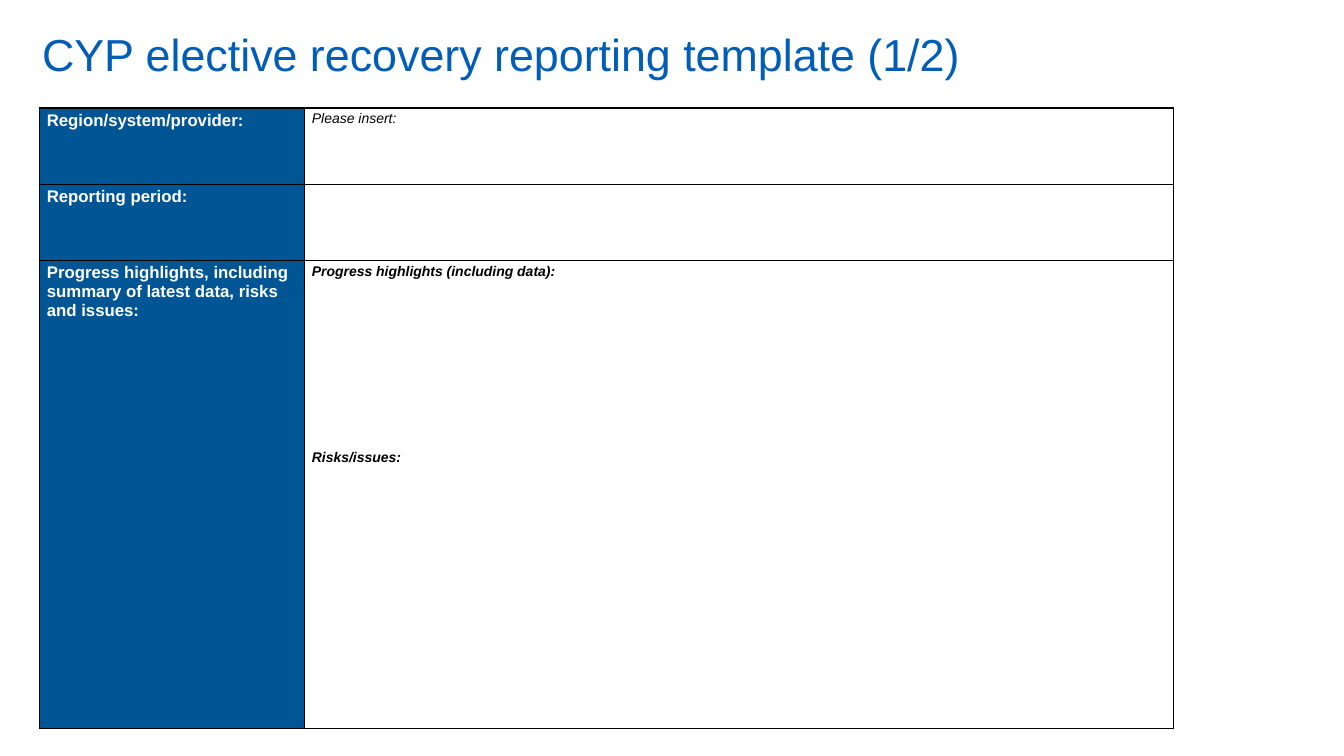
from lxml import etree
from pptx import Presentation
from pptx.dml.color import RGBColor
from pptx.enum.text import MSO_ANCHOR as Anchor
from pptx.oxml.ns import qn
from pptx.util import Cm, Pt

BLACK = RGBColor(0x00, 0x00, 0x00)
WHITE = RGBColor(0xFF, 0xFF, 0xFF)
TITLE_BLUE = RGBColor(0x00, 0x5E, 0xB8)
LABEL_BLUE = RGBColor(0x00, 0x56, 0x95)

COLUMN_WIDTHS = [Cm(6.68), Cm(21.89)]
ROW_HEIGHTS = [Cm(1.93), Cm(1.91), Cm(11.79)]

# Each row: label, then the prompts of the answer cell with their format.
REPORT_ROWS = [
    ("Region/system/provider:", [("Please insert:", {})]),
    ("Reporting period:", []),
    (
        "Progress highlights, including summary of latest data, risks and issues:",
        [
            ("Progress highlights (including data):", {"bold": True}),
            ("Risks/issues:", {"bold": True, "space_before": 122}),
        ],
    ),
]


def write_text(paragraph, text, *, size, color, bold=False, italic=False,
               space_before=0, line_spacing=None):
    if space_before:
        paragraph.space_before = Pt(space_before)
    if line_spacing:
        paragraph.line_spacing = line_spacing
    run = paragraph.add_run()
    run.text = text
    font = run.font
    font.name = "Arial"
    font.size = Pt(size)
    font.bold = bold
    font.italic = italic
    font.color.rgb = color


def add_title(slide, text):
    box = slide.shapes.add_textbox(Cm(0.81), Cm(0.71), Cm(29.57), Cm(1.47))
    frame = box.text_frame
    frame.word_wrap = True
    frame.vertical_anchor = Anchor.MIDDLE
    write_text(frame.paragraphs[0], text, size=32, color=TITLE_BLUE,
               line_spacing=0.9)


def add_borders(cell):
    """Draw a thin black line on all four sides; lines must precede the fill."""
    properties = cell._tc.get_or_add_tcPr()
    for position, side in enumerate(("a:lnL", "a:lnR", "a:lnT", "a:lnB")):
        line = etree.Element(qn(side), w=str(Pt(1)))
        fill = etree.SubElement(line, qn("a:solidFill"))
        etree.SubElement(fill, qn("a:srgbClr"), val=str(BLACK))
        properties.insert(position, line)


def style_cell(cell, fill_color):
    cell.margin_left = cell.margin_right = Cm(0.18)
    cell.margin_top = cell.margin_bottom = Cm(0.08)
    cell.fill.solid()
    cell.fill.fore_color.rgb = fill_color
    add_borders(cell)


def fill_answer(cell, prompts):
    frame = cell.text_frame
    for index, (prompt, text_format) in enumerate(prompts):
        paragraph = frame.add_paragraph() if index else frame.paragraphs[0]
        write_text(paragraph, prompt, size=10, color=BLACK, italic=True,
                   **text_format)


def add_report_table(slide):
    table = slide.shapes.add_table(
        len(ROW_HEIGHTS), len(COLUMN_WIDTHS), Cm(1), Cm(2.72),
        sum(COLUMN_WIDTHS), sum(ROW_HEIGHTS)).table
    table.first_row = False
    table.horz_banding = False
    for column, width in zip(table.columns, COLUMN_WIDTHS):
        column.width = width
    for row, height, (label, prompts) in zip(table.rows, ROW_HEIGHTS, REPORT_ROWS):
        row.height = height
        label_cell, answer_cell = row.cells
        style_cell(label_cell, LABEL_BLUE)
        style_cell(answer_cell, WHITE)
        write_text(label_cell.text_frame.paragraphs[0], label, size=12,
                   color=WHITE, bold=True)
        fill_answer(answer_cell, prompts)


def main():
    deck = Presentation()
    deck.slide_width = Cm(33.87)
    deck.slide_height = Cm(19.05)
    slide = deck.slides.add_slide(deck.slide_layouts[6])
    add_title(slide, "CYP elective recovery reporting template (1/2)")
    add_report_table(slide)
    deck.save("out.pptx")


if __name__ == "__main__":
    main()
